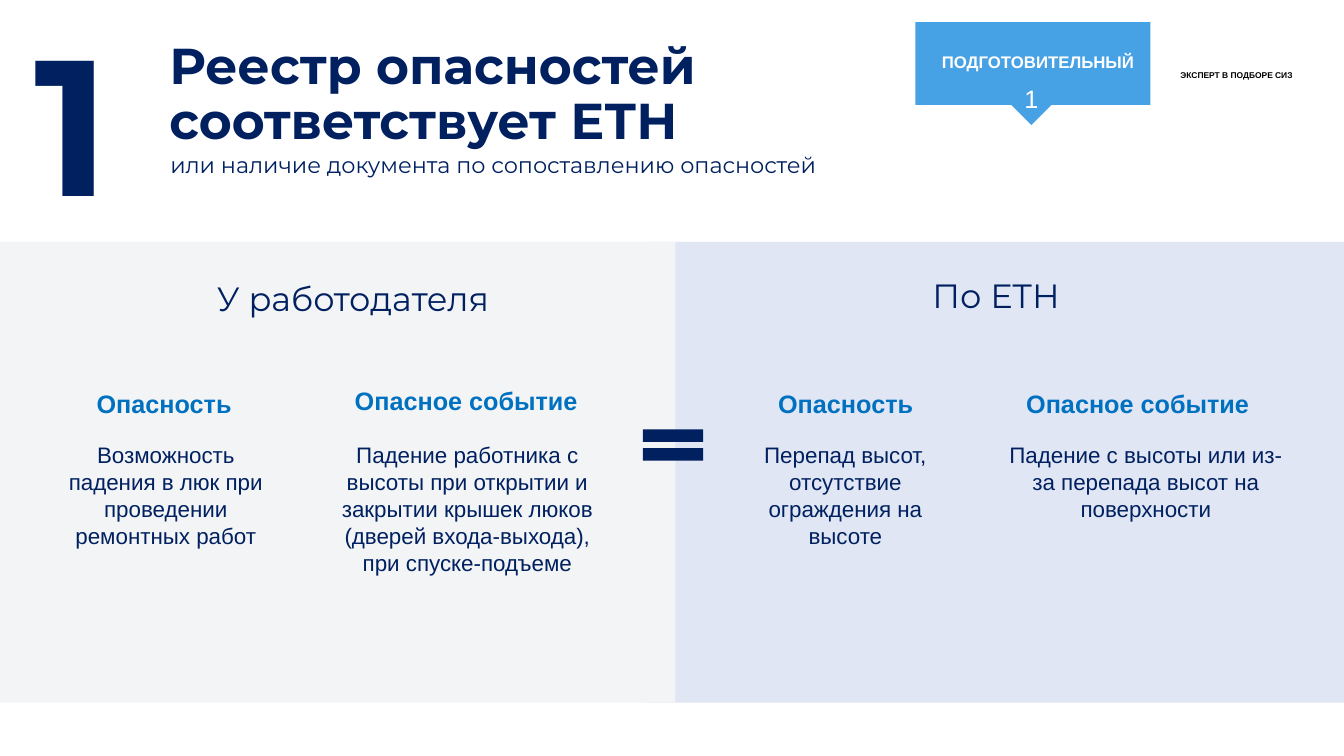
"""Build the slide comparing an employer's hazard register with the ETN."""
from dataclasses import dataclass

from pptx import Presentation
from pptx import util as u
from pptx.dml.color import RGBColor
from pptx.enum import shapes, text

NAVY = RGBColor(0x00, 0x20, 0x60)
BLUE = RGBColor(0x00, 0x70, 0xC0)
SKY = RGBColor(0x47, 0xA1, 0xE5)
PALE_BLUE = RGBColor(0xE0, 0xE6, 0xF3)
PALE_GREY = RGBColor(0xF3, 0xF4, 0xF6)
WHITE = RGBColor(0xFF, 0xFF, 0xFF)
BLACK = RGBColor(0x00, 0x00, 0x00)
CENTER = text.PP_ALIGN.CENTER
LEFT = text.PP_ALIGN.LEFT


@dataclass
class Area:
    left: float
    top: float
    width: float
    height: float

    def lengths(self) -> list:
        return [u.Inches(n) for n in (self.left, self.top, self.width, self.height)]


@dataclass
class Column:
    heading: str
    heading_area: Area
    body: str
    body_area: Area


COLUMNS = [
    Column("Опасность", Area(0.86, 3.8, 1.64, 0.43),
           "Возможность падения в люк при проведении ремонтных работ",
           Area(0.46, 4.33, 2.37, 0.8)),
    Column("Опасное событие", Area(3.42, 3.77, 2.57, 0.43),
           "Падение работника с высоты при открытии и закрытии крышек люков "
           "(дверей входа-выхода), при спуске-подъеме",
           Area(3.18, 4.33, 2.91, 0.43)),
    Column("Опасность", Area(7.62, 3.8, 1.64, 0.43),
           "Перепад высот, отсутствие ограждения на высоте",
           Area(7.2, 4.33, 2.37, 0.8)),
    Column("Опасное событие", Area(10.08, 3.8, 2.57, 0.43),
           "Падение с высоты или из-за перепада высот на поверхности",
           Area(9.91, 4.33, 2.91, 0.43)),
]


def write(box, words: str, *, size: float, font: str = "Arial", color: RGBColor = NAVY,
          bold: bool = False, align=LEFT, spacing=None, inset: bool = True) -> None:
    frame = box.text_frame
    frame.word_wrap = True
    frame.auto_size = text.MSO_AUTO_SIZE.NONE
    frame.vertical_anchor = text.MSO_ANCHOR.TOP
    if not inset:
        frame.margin_left = frame.margin_right = 0
        frame.margin_top = frame.margin_bottom = 0
    para = frame.paragraphs[0]
    para.alignment = align
    if spacing:
        para.line_spacing = u.Pt(spacing)
    span = para.add_run()
    span.text = words
    span.font.size = u.Pt(size)
    span.font.name = font
    span.font.bold = bold
    span.font.color.rgb = color


def add_text(page, words: str, area: Area, **style) -> None:
    write(page.shapes.add_textbox(*area.lengths()), words, **style)


def paint(shape, color: RGBColor) -> None:
    shape.shadow.inherit = False
    shape.fill.solid()
    shape.fill.fore_color.rgb = color
    shape.line.fill.background()


def add_block(page, kind, area: Area, color: RGBColor) -> None:
    paint(page.shapes.add_shape(kind, *area.lengths()), color)


def add_header(page) -> None:
    title = page.shapes.title
    title.left, title.top, title.width, title.height = Area(1.58, 0.35, 8.45, 0.73).lengths()
    write(title, "Реестр опасностей соответствует ЕТН", size=36, font="Montserrat",
          bold=True, spacing=39)
    add_text(page, "1", Area(0.24, -0.02, 2.11, 2.42), size=138, font="Montserrat", bold=True)
    add_text(page, "или наличие документа по сопоставлению опасностей",
             Area(1.59, 1.45, 8.29, 0.37), size=16, font="Montserrat")
    add_text(page, "ЭКСПЕРТ В ПОДБОРЕ СИЗ", Area(11.61, 0.65, 1.45, 0.2),
             size=6, color=BLACK, bold=True)


def add_comparison(page) -> None:
    rectangle = shapes.MSO_SHAPE.RECTANGLE
    add_block(page, rectangle, Area(6.41, 2.4, 6.92, 4.57), PALE_BLUE)
    add_block(page, rectangle, Area(0, 2.4, 6.7, 4.57), PALE_GREY)
    add_block(page, shapes.MSO_SHAPE.MATH_EQUAL, Area(6.27, 4.15, 0.81, 0.53), NAVY)
    for words, area in (("У работодателя", Area(0.91, 2.71, 5.18, 0.5)),
                        ("По ЕТН", Area(9.03, 2.68, 1.7, 0.5))):
        add_text(page, words, area, size=24, font="Montserrat", align=CENTER)
    for column in COLUMNS:
        add_text(page, column.heading, column.heading_area, size=18, color=BLUE, bold=True)
        add_text(page, column.body, column.body_area, size=16, align=CENTER)


def add_stage_badge(page) -> None:
    add_block(page, shapes.MSO_SHAPE.RECTANGLE, Area(9.08, 0.22, 2.33, 0.82), SKY)
    pointer = page.shapes.build_freeform(u.Inches(10.62), u.Inches(0.85))
    pointer.add_line_segments([(u.Inches(10.23), u.Inches(1.24)),
                               (u.Inches(9.88), u.Inches(0.89))], close=True)
    paint(pointer.convert_to_shape(), SKY)
    add_text(page, "ПОДГОТОВИТЕЛЬНЫЙ", Area(9.12, 0.51, 2.35, 0.2), size=12,
             color=WHITE, bold=True, align=CENTER, inset=False)
    add_text(page, "1", Area(10.06, 0.78, 0.34, 0.4), size=18, color=WHITE, align=CENTER)


def main() -> None:
    deck = Presentation()
    deck.slide_width = u.Inches(13.33)
    deck.slide_height = u.Inches(7.5)
    page = deck.slides.add_slide(deck.slide_layouts.get_by_name("Title Only"))
    add_comparison(page)
    add_header(page)
    add_stage_badge(page)
    deck.save("out.pptx")


if __name__ == "__main__":
    main()
